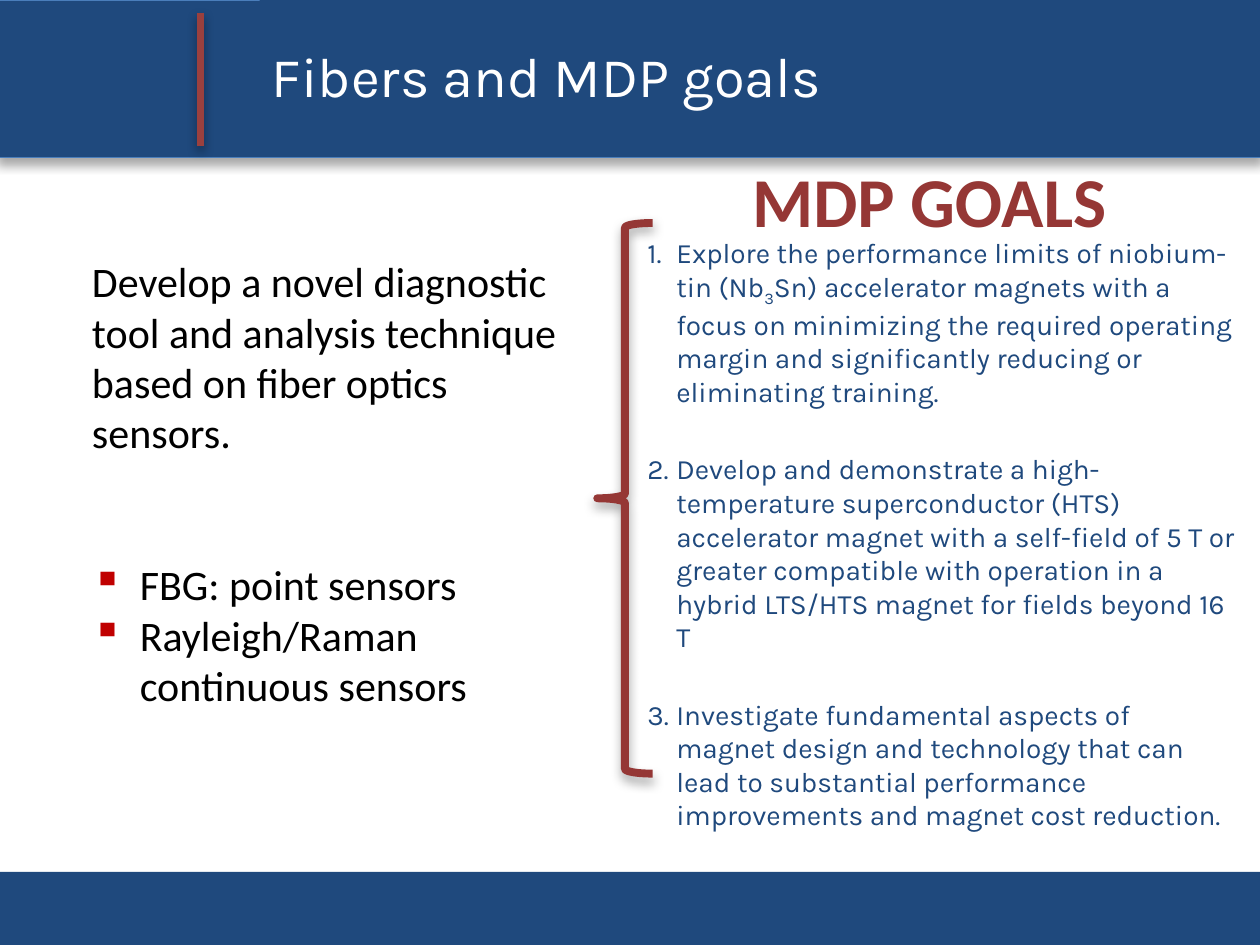
"""Build the slide on fiber sensors and the MDP goals."""
import pptx
import pptx.dml.color
import pptx.enum.shapes
import pptx.enum.text
import pptx.oxml.ns
import pptx.util
import lxml.etree

Inches = pptx.util.Inches
Pt = pptx.util.Pt
Shapes = pptx.enum.shapes.MSO_SHAPE
Anchor = pptx.enum.text.MSO_ANCHOR
NAVY, RED, BULLET_RED = "1F497D", "953735", "C00000"


def color(value):
    return pptx.dml.color.RGBColor.from_string(value)


def add_node(parent, tag, **attributes):
    return lxml.etree.SubElement(parent, pptx.oxml.ns.qn("a:" + tag), attributes)


class SlideBuilder:
    def __init__(self, deck):
        self.page = deck.slides.add_slide(deck.slide_layouts[6])

    def effects(self, shape, shadow_alpha):
        effects = add_node(shape._element.spPr, "effectLst")
        if shadow_alpha:
            shadow = add_node(effects, "outerShdw", blurRad=str(Pt(6)), dist=str(Pt(3)),
                              dir="5400000", rotWithShape="0")
            shade = add_node(shadow, "srgbClr", val="000000")
            add_node(shade, "alpha", val=str(shadow_alpha * 1000))

    def outline(self, shape, line, width):
        shape.line.color.rgb = color(line)
        shape.line.width = Pt(width)

    def shape(self, kind, place, fill=None, line=None, width=1, shadow_alpha=0):
        shape = self.page.shapes.add_shape(kind, *map(Inches, place))
        if fill:
            shape.fill.solid()
            shape.fill.fore_color.rgb = color(fill)
        else:
            shape.fill.background()
        if line:
            self.outline(shape, line, width)
        else:
            shape.line.fill.background()
        self.effects(shape, shadow_alpha)
        return shape

    def rule(self, start, end, line, width, shadow_alpha):
        rule = self.page.shapes.add_connector(
            pptx.enum.shapes.MSO_CONNECTOR.STRAIGHT, *map(Inches, start + end))
        self.outline(rule, line, width)
        self.effects(rule, shadow_alpha)

    def text_box(self, place, inset, wrap=True):
        box = self.page.shapes.add_textbox(*map(Inches, place))
        self.frame(box, inset, wrap)
        return box

    def frame(self, box, inset, wrap=True, anchor=Anchor.TOP):
        frame = box.text_frame
        frame.word_wrap = wrap
        frame.vertical_anchor = anchor
        frame.margin_left = frame.margin_right = Inches(inset)
        frame.margin_top = frame.margin_bottom = Inches(inset)

    def paragraph(self, box, before=0, indent=0, bullet=None):
        frame = box.text_frame
        first = frame.paragraphs[0]
        para = frame.add_paragraph() if first.runs else first
        para.alignment = pptx.enum.text.PP_ALIGN.LEFT
        para.space_before = Pt(before)
        if bullet:
            properties = para._p.get_or_add_pPr()
            properties.set("marL", str(Inches(indent)))
            properties.set("indent", str(-Inches(indent)))
            if bullet == "number":
                properties.set("marL", str(Inches(0.37)))
                add_node(properties, "buAutoNum", type="arabicPeriod")
            else:
                add_node(add_node(properties, "buClr"), "srgbClr", val=BULLET_RED)
                add_node(properties, "buChar", char=bullet)
        return para

    def span(self, para, text, size, font, ink, bold=False, subscript=False):
        span = para.add_run()
        span.text = text
        span.font.size = Pt(size)
        span.font.name = font
        span.font.bold = bold
        span.font.color.rgb = color(ink)
        if subscript:
            span._r.get_or_add_rPr().set("baseline", "-25000")


def main():
    deck = pptx.Presentation()
    deck.slide_width, deck.slide_height = Inches(10), Inches(7.5)
    slide = SlideBuilder(deck)

    slide.shape(Shapes.RECTANGLE, (-0.01, 6.92, 10.03, 0.6), NAVY)
    slide.shape(Shapes.RECTANGLE, (-0.03, 0, 10.04, 1.25), NAVY, "4A7EBB", 1, 35)
    slide.rule((1.59, 1.16), (1.59, 0.1), "9A403E", 4, 38)

    title = slide.shape(Shapes.RECTANGLE, (2.06, -0.01, 7.95, 1.21), NAVY)
    slide.frame(title, 0.1, anchor=Anchor.MIDDLE)
    slide.span(slide.paragraph(title), "Fibers and MDP goals", 32, "Karla", "FFFFFF")

    goals = [
        [("Explore the performance limits of niobium-tin (Nb", False), ("3", True),
         ("Sn) accelerator magnets with a focus on minimizing the required operating "
          "margin and significantly reducing or eliminating training.", False)],
        [("Develop and demonstrate a high-temperature superconductor (HTS) accelerator "
          "magnet with a self-ﬁeld of 5 T or greater compatible with operation in a "
          "hybrid LTS/HTS magnet for ﬁelds beyond 16 T", False)],
        [("Investigate fundamental aspects of magnet design and technology that can lead "
          "to substantial performance improvements and magnet cost reduction.", False)],
    ]
    goal_box = slide.text_box((4.9, 1.77, 5, 4.37), 0.1)
    for index, goal in enumerate(goals):
        para = slide.paragraph(goal_box, 25 if index else 0, 0.23, "number")
        for text, subscript in goal:
            slide.span(para, text, 16, "Karla", NAVY, subscript=subscript)

    sensor_box = slide.text_box((0.7, 2, 3.81, 3.9), 0.03)
    sensors = [
        ("Develop a novel diagnostic tool and analysis technique based on fiber optics "
         "sensors.", 0, None),
        ("FBG: point sensors", 58, "▪"),
        ("Rayleigh/Raman continuous sensors", 0, "▪"),
    ]
    for text, before, bullet in sensors:
        para = slide.paragraph(sensor_box, before, 0.38, bullet)
        slide.span(para, text, 24, "Calibri", "000000")

    heading = slide.text_box((5.94, 1.22, 2.9, 0.73), 0.03, wrap=False)
    slide.span(slide.paragraph(heading), "MDP GOALS", 40, "Calibri", RED, bold=True)
    slide.shape(Shapes.LEFT_BRACE, (4.74, 1.77, 0.44, 4.37), None, RED, 4.5, 35)

    deck.save("out.pptx")


if __name__ == "__main__":
    main()
